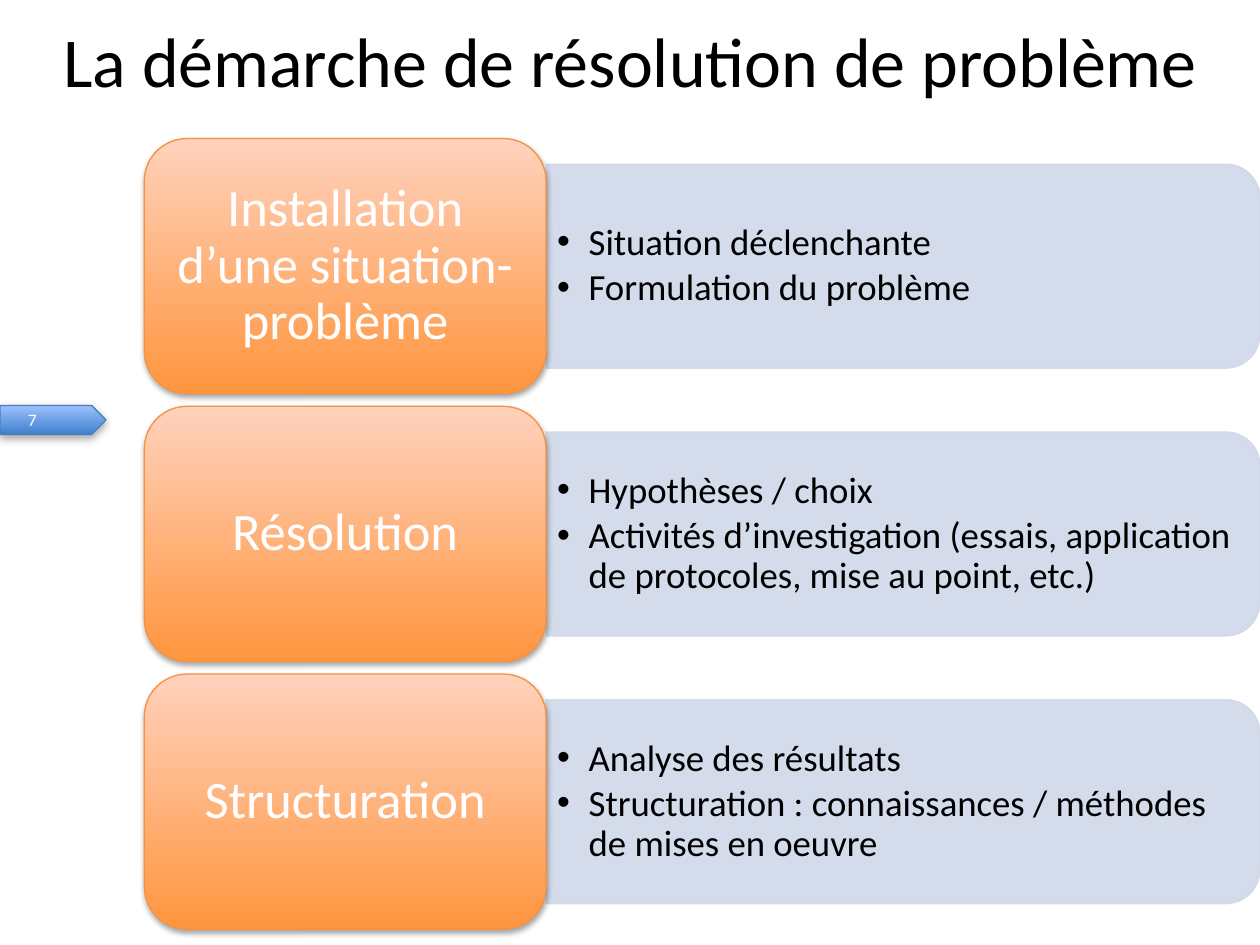
from dataclasses import dataclass

from lxml import etree
from pptx import Presentation
from pptx.dml.color import RGBColor
from pptx.enum.shapes import MSO_SHAPE
from pptx.enum.text import MSO_ANCHOR, PP_ALIGN
from pptx.oxml.ns import qn
from pptx.util import Pt

PENTAGON = MSO_SHAPE.PENTAGON
ROUNDED = MSO_SHAPE.ROUNDED_RECTANGLE
ROUND_TOP = MSO_SHAPE.ROUND_2_SAME_RECTANGLE
MIDDLE = MSO_ANCHOR.MIDDLE
LEFT, CENTER = PP_ALIGN.LEFT, PP_ALIGN.CENTER


@dataclass(frozen=True)
class Theme:
    font: str = "Calibri"
    dark: str = "000000"
    light: str = "FFFFFF"
    panel: str = "D0D8E8"
    panel_opacity: int = 90
    step_gradient: tuple = ("FF953E", "FFD2BD")
    step_line: str = "F69240"
    tag_gradient: tuple = ("3F80CD", "9BC1FF")
    tag_line: str = "4A7EBB"
    title_size: int = 40
    step_size: int = 30
    bullet_size: int = 21
    tag_size: int = 10
    line_width: float = 0.75


class SlideBuilder:
    def __init__(self, slide, theme):
        self.slide = slide
        self.theme = theme

    def set_text(self, frame, lines, size, color, insets, bullets=False, **formats):
        """Fill a text frame, one paragraph per line."""
        frame.word_wrap = True
        frame.vertical_anchor = MIDDLE
        for side, inset in zip(("left", "top", "right", "bottom"), insets):
            setattr(frame, f"margin_{side}", Pt(inset))
        for index, line in enumerate(lines):
            paragraph = frame.paragraphs[0] if index == 0 else frame.add_paragraph()
            paragraph.text = line
            for name, value in formats.items():
                setattr(paragraph, name, value)
            if bullets:
                self.bullet(paragraph)
            font = paragraph.runs[0].font
            for name, value in {"name": self.theme.font, "size": Pt(size)}.items():
                setattr(font, name, value)
            font.color.rgb = RGBColor.from_string(color)

    def bullet(self, paragraph, indent=18):
        paragraph.level = 1
        properties = paragraph._p.get_or_add_pPr()
        properties.set("marL", str(Pt(indent)))
        properties.set("indent", str(-Pt(indent)))
        etree.SubElement(properties, qn("a:buFont"), typeface="Arial")
        etree.SubElement(properties, qn("a:buChar"), char="•")

    def opacity(self, paint, percent):
        color = paint.find(".//" + qn("a:srgbClr"))
        etree.SubElement(color, qn("a:alpha"), val=str(percent * 1000))

    def shape(self, kind, box, line):
        shape = self.slide.shapes.add_shape(kind, *map(Pt, box))
        shape.shadow.inherit = False
        shape.line.color.rgb = RGBColor.from_string(line)
        shape.line.width = Pt(self.theme.line_width)
        return shape

    def glossy(self, kind, box, gradient, line, blur):
        """Shape with an upward gradient and a soft shadow below."""
        shape = self.shape(kind, box, line)
        shape.fill.gradient()
        shape.fill.gradient_angle = 90
        for stop, color in zip(shape.fill.gradient_stops, gradient):
            stop.color.rgb = RGBColor.from_string(color)
        effects = shape._element.spPr.find(qn("a:effectLst"))
        shadow = etree.SubElement(
            effects, qn("a:outerShdw"), blurRad=str(Pt(blur)), dist=str(Pt(1.8)),
            dir="5400000", rotWithShape="0")
        etree.SubElement(shadow, qn("a:srgbClr"), val=self.theme.dark)
        self.opacity(shadow, 35)
        return shape

    def title(self, text, box):
        title = self.slide.shapes.title
        for name, value in zip(("left", "top", "width", "height"), box):
            setattr(title, name, Pt(value))
        self.set_text(title.text_frame, [text], self.theme.title_size,
                      self.theme.dark, (7.2, 3.6, 7.2, 3.6), alignment=CENTER)

    def page_tag(self, number, box):
        theme = self.theme
        tag = self.glossy(PENTAGON, box, theme.tag_gradient, theme.tag_line, blur=5)
        self.set_text(tag.text_frame, [number], theme.tag_size, theme.light,
                      (16, 0, 0, 0), alignment=LEFT)

    def panel(self, left, top, width, height):
        """Panel rounded on its right: a round-top shape turned by 90 degrees."""
        theme = self.theme
        turned = (left + (width - height) / 2, top + (height - width) / 2, height, width)
        panel = self.shape(ROUND_TOP, turned, theme.panel)
        panel.rotation = 90
        panel.fill.solid()
        panel.fill.fore_color.rgb = RGBColor.from_string(theme.panel)
        properties = panel._element.spPr
        for paint in (properties.find(qn("a:solidFill")), properties.find(qn("a:ln"))):
            self.opacity(paint, theme.panel_opacity)

    def bullets(self, lines, box):
        text_box = self.slide.shapes.add_textbox(*map(Pt, box))
        self.set_text(text_box.text_frame, lines, self.theme.bullet_size,
                      self.theme.dark, (6.3, 3.15, 6.3, 3.15), bullets=True,
                      alignment=LEFT, line_spacing=0.9, space_after=Pt(3.15))

    def step(self, text, box):
        theme = self.theme
        step = self.glossy(ROUNDED, box, theme.step_gradient, theme.step_line, blur=3.1)
        self.set_text(step.text_frame, [text], theme.step_size, theme.light,
                      (9, 4.5, 9, 4.5), alignment=CENTER, line_spacing=0.9,
                      space_after=Pt(10.5))


STEPS = [
    ("Installation d’une situation-problème",
     ["Situation déclenchante", "Formulation du problème"]),
    ("Résolution",
     ["Hypothèses / choix",
      "Activités d’investigation (essais, application de protocoles, "
      "mise au point, etc.)"]),
    ("Structuration",
     ["Analyse des résultats",
      "Structuration : connaissances / méthodes de mises en oeuvre"]),
]

SLIDE_WIDTH, SLIDE_HEIGHT = 720, 540
STEP_LEFT, STEP_TOP, STEP_WIDTH, STEP_HEIGHT = 82.5, 79.2, 229.6, 145.8
STEP_PITCH = 153
PANEL_HEIGHT = 116.6
BULLETS_WIDTH, BULLETS_HEIGHT = 402.4, 105.2


def main():
    presentation = Presentation()
    presentation.slide_width = Pt(SLIDE_WIDTH)
    presentation.slide_height = Pt(SLIDE_HEIGHT)
    title_only = presentation.slide_layouts[5]
    builder = SlideBuilder(presentation.slides.add_slide(title_only), Theme())

    # Page tag and title
    builder.page_tag("7", (0, 231.7, 60.6, 16.6))
    builder.title("La démarche de résolution de problème", (0, 3, SLIDE_WIDTH, 62))

    # One row per step: panel, its bullets, then the step box on top
    panel_left = STEP_LEFT + STEP_WIDTH
    for row, (step, details) in enumerate(STEPS):
        top = STEP_TOP + row * STEP_PITCH
        middle = top + STEP_HEIGHT / 2
        builder.panel(panel_left, middle - PANEL_HEIGHT / 2,
                      SLIDE_WIDTH - panel_left, PANEL_HEIGHT)
        builder.bullets(details, (panel_left, middle - BULLETS_HEIGHT / 2,
                                  BULLETS_WIDTH, BULLETS_HEIGHT))
        builder.step(step, (STEP_LEFT, top, STEP_WIDTH, STEP_HEIGHT))

    presentation.save("out.pptx")


if __name__ == "__main__":
    main()
